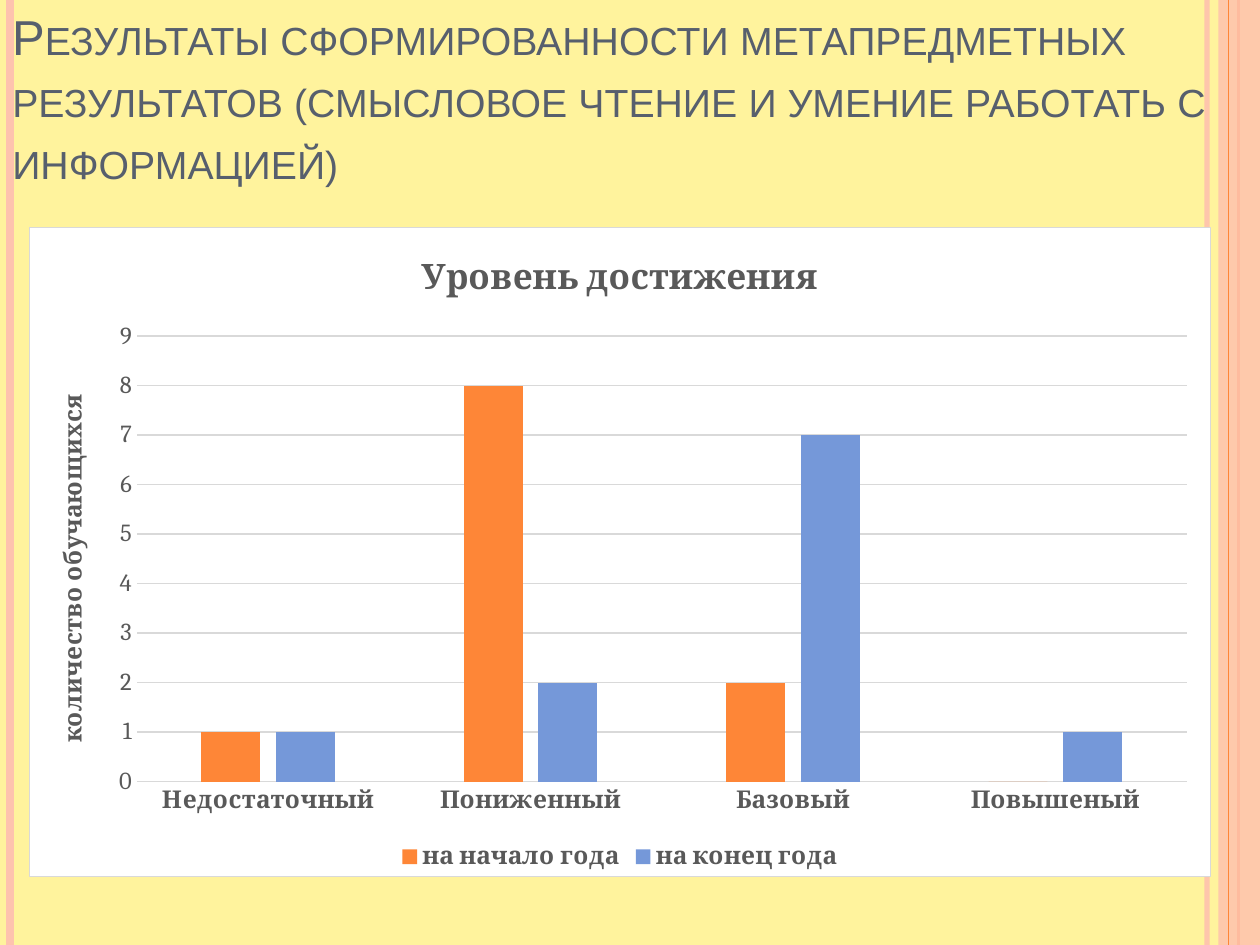
import pptx
import pptx.chart.data
import pptx.dml.color
import pptx.enum.chart
import pptx.enum.shapes
import pptx.enum.text
import pptx.oxml
import pptx.oxml.ns
import pptx.util

Inches = pptx.util.Inches
Pt = pptx.util.Pt
qn = pptx.oxml.ns.qn

ORANGE, PEACH, BLUE = "FE8637", "FEC3AE", "7598D9"
YELLOW, SLATE, GRAY, LIGHT_GRAY = "FFF39D", "575F6D", "595959", "D9D9D9"


def color(value):
    return pptx.dml.color.RGBColor.from_string(value)


def paint(fill, value, alpha=None):
    fill.solid()
    fill.fore_color.rgb = color(value)
    if alpha is not None:
        for node in fill._xPr.iter(qn("a:srgbClr")):
            pptx.oxml.ns  
            child = node.makeelement(qn("a:alpha"), {"val": str(alpha * 1000)})
            node.append(child)


def format_font(font, size, value, name="Cambria", bold=False):
    font.size = Pt(size)
    font.name = name
    font.bold = bold
    font.color.rgb = color(value)


def write_text(text_frame, text, small_caps=False, spacing=None, **style):
    paragraph = text_frame.paragraphs[0]
    paragraph.line_spacing = spacing
    run = paragraph.add_run()
    run.text = text
    format_font(run.font, **style)
    if small_caps:
        run._r.get_or_add_rPr().set("cap", "small")


def add_vertical_line(slide, x, height, value, width, alpha=None):
    line = slide.shapes.add_connector(
        pptx.enum.shapes.MSO_CONNECTOR.STRAIGHT,
        Inches(x), 0, Inches(x), Inches(height))
    line.line.width = Pt(width)
    paint(line.line.fill, value, alpha)
    properties = line._element.spPr
    properties.append(properties.makeelement(qn("a:effectLst"), {}))


def add_side_stripes(slide, width, height):
    add_vertical_line(slide, width - 0.42, height, PEACH, 3, 93)
    add_vertical_line(slide, 0.08, height, PEACH, 4.5)
    add_vertical_line(slide, width - 0.17, height, ORANGE, 1.5)
    band = slide.shapes.add_shape(
        pptx.enum.shapes.MSO_SHAPE.RECTANGLE,
        Inches(width - 0.33), 0, Inches(0.33), Inches(height))
    band.shadow.inherit = False
    band.line.fill.background()
    paint(band.fill, PEACH, 87)
    add_vertical_line(slide, width - 0.25, height, ORANGE, 0.75)


def add_heading(slide, left, top, width, height):
    box = slide.shapes.add_textbox(
        Inches(left), Inches(top), Inches(width), Inches(height))
    box.text_frame.word_wrap = True
    box.text_frame.vertical_anchor = pptx.enum.text.MSO_ANCHOR.BOTTOM
    write_text(
        box.text_frame,
        "Результаты сформированности метапредметных результатов "
        "(смысловое чтение и умение работать с информацией)",
        size=28, value=SLATE, name="Arial", small_caps=True, spacing=1.05)


def frame_chart(chart):
    frame = pptx.oxml.parse_xml(
        f'<c:spPr {pptx.oxml.ns.nsdecls("c", "a")}>'
        '<a:solidFill><a:srgbClr val="FFFFFF"/></a:solidFill>'
        f'<a:ln w="{Pt(0.75)}"><a:solidFill><a:srgbClr val="{LIGHT_GRAY}"/>'
        '</a:solidFill></a:ln></c:spPr>')
    chart._chartSpace.find(qn("c:chart")).addnext(frame)


def style_axes(chart):
    for axis, bold in ((chart.category_axis, True), (chart.value_axis, False)):
        axis.major_tick_mark = pptx.enum.chart.XL_TICK_MARK.NONE
        axis.minor_tick_mark = pptx.enum.chart.XL_TICK_MARK.NONE
        format_font(axis.tick_labels.font, 14, GRAY, bold=bold)
    value_axis = chart.value_axis
    value_axis.minimum_scale, value_axis.maximum_scale = 0, 9
    value_axis.major_unit = 1
    value_axis.format.line.fill.background()
    value_axis.has_major_gridlines = True
    for line in (chart.category_axis.format.line,
                 value_axis.major_gridlines.format.line):
        line.width = Pt(0.75)
        paint(line.fill, LIGHT_GRAY)
    write_text(value_axis.axis_title.text_frame, "количество обучающихся",
               size=14, value=GRAY, bold=True)


def add_results_chart(slide, left, top, width, height):
    data = pptx.chart.data.CategoryChartData()
    data.categories = ["Недостаточный", "Пониженный", "Базовый", "Повышеный"]
    data.add_series("на начало года", (1, 8, 2, 0))
    data.add_series("на конец года", (1, 2, 7, 1))
    chart = slide.shapes.add_chart(
        pptx.enum.chart.XL_CHART_TYPE.COLUMN_CLUSTERED,
        Inches(left), Inches(top), Inches(width), Inches(height), data).chart
    format_font(chart.font, 10, "000000")
    frame_chart(chart)
    write_text(chart.chart_title.text_frame, "Уровень достижения",
               size=20, value=GRAY, bold=True)
    chart.chart_title.include_in_layout = False
    style_axes(chart)
    chart.has_legend = True
    chart.legend.position = pptx.enum.chart.XL_LEGEND_POSITION.BOTTOM
    chart.legend.include_in_layout = False
    format_font(chart.legend.font, 14, GRAY, bold=True)
    plot = chart.plots[0]
    plot.vary_by_categories = False
    plot.gap_width, plot.overlap = 219, -27
    for series, value in zip(plot.series, (ORANGE, BLUE)):
        paint(series.format.fill, value)
        series.invert_if_negative = False


def main():
    width, height = 10, 7.5
    presentation = pptx.Presentation()
    presentation.slide_width = Inches(width)
    presentation.slide_height = Inches(height)
    slide = presentation.slides.add_slide(presentation.slide_layouts[6])
    paint(slide.background.fill, YELLOW)
    add_side_stripes(slide, width, height)
    add_heading(slide, 0, 0, width, 1.55)
    add_results_chart(slide, 0.23, 1.8, 9.38, 5.16)
    presentation.save("out.pptx")


if __name__ == "__main__":
    main()
